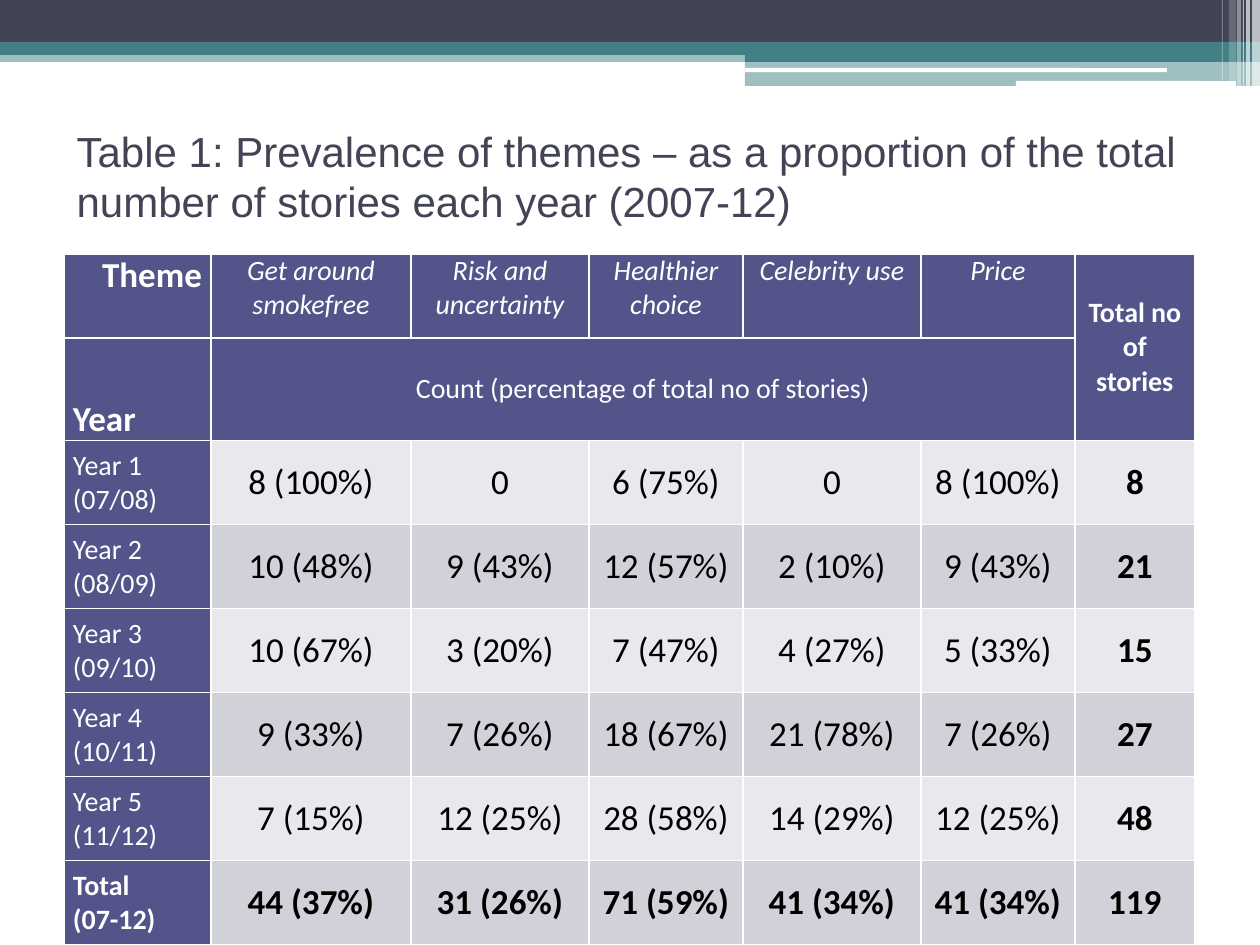
import pptx
import pptx.dml.color
import pptx.enum.shapes
import pptx.enum.text
import pptx.oxml
import pptx.util

RGBColor = pptx.dml.color.RGBColor
Align = pptx.enum.text.PP_ALIGN
Anchor = pptx.enum.text.MSO_ANCHOR
Shape = pptx.enum.shapes.MSO_SHAPE

SLATE = RGBColor(0x42, 0x44, 0x56)
TEAL = RGBColor(0x43, 0x80, 0x86)
INDIGO = RGBColor(0x53, 0x54, 0x8A)
LIGHT_BAND = RGBColor(0xE9, 0xE9, 0xED)
DARK_BAND = RGBColor(0xD1, 0xD1, 0xDA)
WHITE = RGBColor(0xFF, 0xFF, 0xFF)
BLACK = RGBColor(0, 0, 0)
DRAWING = "http://schemas.openxmlformats.org/drawingml/2006/main"


def px(length):
    return pptx.util.Emu(round(length * 914400 / 126))


def write_cell(cell, text, fill, align=Align.CENTER, anchor=Anchor.MIDDLE, **font):
    """Fill a cell and write one paragraph per line of text."""
    cell.fill.solid()
    cell.fill.fore_color.rgb = fill
    cell.vertical_anchor = anchor
    cell.margin_left = cell.margin_right = px(9)
    cell.margin_top = cell.margin_bottom = 0
    cell.text = text
    look = {"name": "Calibri", "size": pptx.util.Pt(16), "bold": False, "italic": False} | font
    color = look.pop("color", WHITE)
    for para in cell.text_frame.paragraphs:
        para.alignment = align
        for span in para.runs:
            span.font.color.rgb = color
            for name, value in look.items():
                setattr(span.font, name, value)


deck = pptx.Presentation()
deck.slide_width, deck.slide_height = px(1260), px(945)
page = deck.slides.add_slide(deck.slide_layouts[5])

# Banner: left, top, width, height, colour, opacity in percent
bars = [
    (0, 50, 1260, 12, TEAL, 50),
    (0, 0, 1260, 43, SLATE, 100),
    (0, 42, 1260, 13, TEAL, 100),
    (745, 49, 515, 13, TEAL, 100),
    (745, 61, 515, 25, TEAL, 50),
    (745, 68, 422, 4, WHITE, 100),
    (1016, 81, 220, 5, WHITE, 100),
    (1252, 0, 8, 86, WHITE, 65),
    (1246, 0, 4, 86, WHITE, 65),
    (1243, 0, 1, 86, WHITE, 60),
    (1237, 0, 4, 86, WHITE, 40),
    (1229, 0, 7, 81, WHITE, 20),
    (1222, 0, 1, 81, WHITE, 30),
]
for left, top, width, height, color, opacity in bars:
    rounded = color == WHITE and opacity == 100
    kind = Shape.ROUNDED_RECTANGLE if rounded else Shape.RECTANGLE
    bar = page.shapes.add_shape(kind, px(left), px(top), px(width), px(height))
    bar.shadow.inherit = False
    bar.line.fill.background()
    bar.fill.solid()
    bar.fill.fore_color.rgb = color
    if opacity < 100:
        swatch = bar.fill._xPr.find(f".//{{{DRAWING}}}srgbClr")
        swatch.append(pptx.oxml.parse_xml(f'<a:alpha xmlns:a="{DRAWING}" val="{opacity * 1000}"/>'))

title = page.shapes.title
title.left, title.top, title.width, title.height = px(64), px(125), px(1134), px(147)
frame = title.text_frame
frame.text = "Table 1: Prevalence of themes – as a proportion of the total number of stories each year (2007-12)"
frame.word_wrap = True
frame.auto_size = pptx.enum.text.MSO_AUTO_SIZE.NONE
frame.vertical_anchor = Anchor.TOP
frame.margin_top = 0
frame.paragraphs[0].alignment = Align.LEFT
span = frame.paragraphs[0].runs[0]
span.font.name, span.font.size = "Arial", pptx.util.Pt(24)
span.font.color.rgb = SLATE

themes = ["Get around smokefree", "Risk and uncertainty", "Healthier choice", "Celebrity use", "Price"]
years = [
    ("Year 1\n(07/08)", "8 (100%)", "0", "6 (75%)", "0", "8 (100%)", "8"),
    ("Year 2\n(08/09)", "10 (48%)", "9 (43%)", "12 (57%)", "2 (10%)", "9 (43%)", "21"),
    ("Year 3\n(09/10)", "10 (67%)", "3 (20%)", "7 (47%)", "4 (27%)", "5 (33%)", "15"),
    ("Year 4\n(10/11)", "9 (33%)", "7 (26%)", "18 (67%)", "21 (78%)", "7 (26%)", "27"),
    ("Year 5\n(11/12)", "7 (15%)", "12 (25%)", "28 (58%)", "14 (29%)", "12 (25%)", "48"),
    ("Total\n(07-12)", "44 (37%)", "31 (26%)", "71 (59%)", "41 (34%)", "41 (34%)", "119"),
]
widths = [147, 200, 178, 154, 178, 154, 120]
heights = [84, 53] + [84] * len(years)
table = page.shapes.add_table(
    len(heights), len(widths), px(64), px(254), px(sum(widths)), px(sum(heights))
).table
for column, width in zip(table.columns, widths):
    column.width = px(width)
for row, height in zip(table.rows, heights):
    row.height = px(height)

table.cell(0, 6).merge(table.cell(1, 6))
table.cell(1, 1).merge(table.cell(1, 5))
large = pptx.util.Pt(20)
write_cell(table.cell(0, 0), "Theme", INDIGO, Align.RIGHT, Anchor.TOP, size=large, bold=True)
for index, theme in enumerate(themes, start=1):
    write_cell(table.cell(0, index), theme, INDIGO, anchor=Anchor.TOP, italic=True)
write_cell(table.cell(0, 6), "Total no of stories", INDIGO, bold=True)
write_cell(table.cell(1, 0), "Year", INDIGO, Align.LEFT, Anchor.BOTTOM, size=large, bold=True)
write_cell(table.cell(1, 1), "Count (percentage of total no of stories)", INDIGO)

for row, (year, *counts) in enumerate(years, start=2):
    is_total = row == len(heights) - 1
    band = DARK_BAND if row % 2 else LIGHT_BAND
    write_cell(table.cell(row, 0), year, INDIGO, Align.JUSTIFY, bold=is_total)
    for column, count in enumerate(counts, start=1):
        bold = is_total or column == len(counts)
        write_cell(table.cell(row, column), count, band, size=large, bold=bold, color=BLACK)

deck.save("out.pptx")
